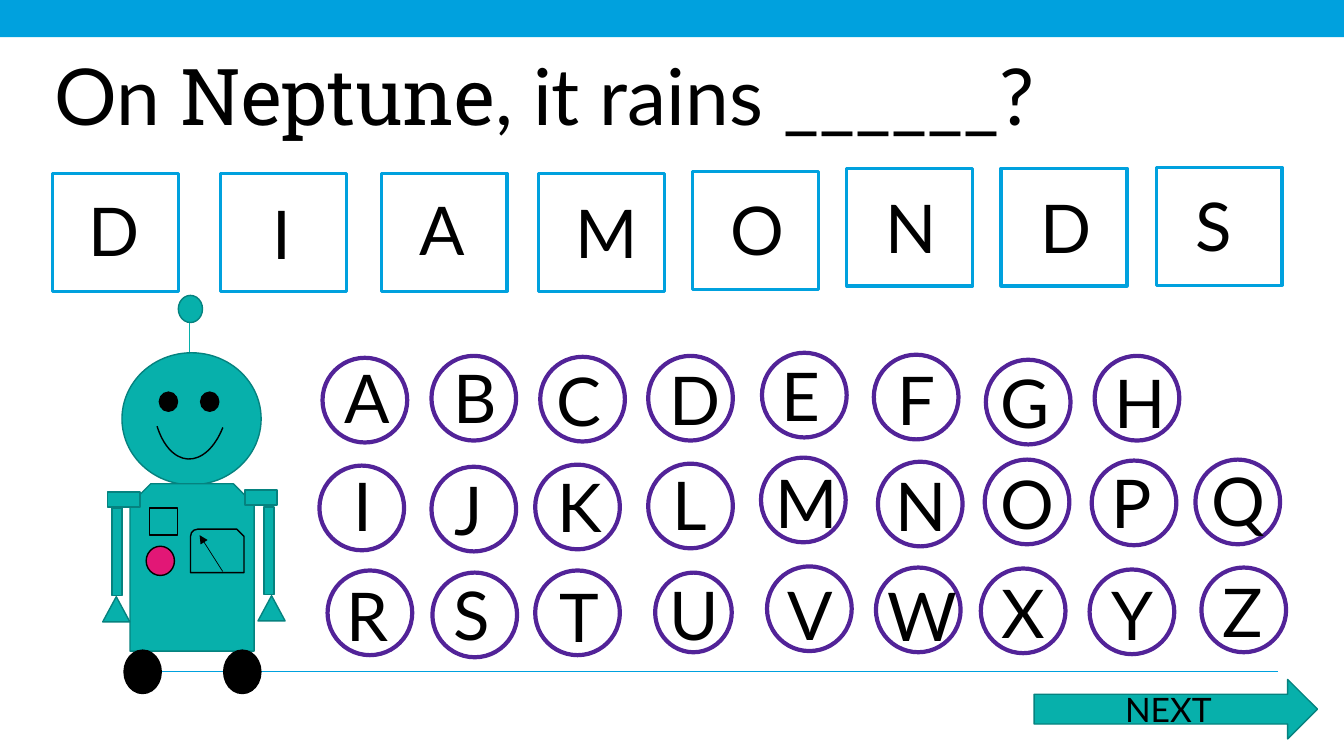
from pptx import Presentation
from pptx.dml.color import RGBColor
from pptx.enum import shapes, text
from pptx.oxml import xmlchemy
from pptx.util import Pt

KIND = shapes.MSO_SHAPE
COLORS = {
    "blue": "00A1DE", "teal": "07B0AB", "dark teal": "05827F",
    "purple": "522398", "pink": "E21776", "black": "000000", "white": "FFFFFF",
}
FONT = "Lato"
ACCENT_FONT = "Roboto Slab"

# Letter, left and top of its frame, left and top of its text
ANSWER = [
    ("D", 37.4, 123.8, 56.2, 131.8), ("I", 157.7, 123.8, 187.9, 133.9),
    ("A", 272.2, 123.8, 292.3, 131), ("M", 384.5, 123.8, 403.9, 133.2),
    ("O", 494.6, 122.4, 514.8, 131), ("N", 604.8, 120.2, 625.7, 129.6),
    ("D", 715, 120.2, 735.8, 129.6), ("S", 825.8, 119.5, 846.7, 128.2),
]
ALPHABET = [
    ("A", 230.4, 255.6, 239, 250.6), ("B", 308.2, 254.2, 316.8, 250.6),
    ("C", 385.9, 254.9, 390.2, 253.4), ("D", 463, 254.2, 470.9, 252.7),
    ("E", 544.3, 252, 550.8, 249.8), ("F", 624.2, 253.4, 634.3, 252.7),
    ("G", 704.2, 257, 707.8, 254.2), ("H", 781.9, 254.2, 789.1, 254.2),
    ("I", 228.2, 332.6, 245.5, 328.3), ("J", 308.2, 333.4, 317.5, 331.2),
    ("K", 382.3, 331.9, 391, 329), ("L", 463, 331.2, 473, 327.6),
    ("M", 543.6, 326.9, 546.5, 326.2), ("N", 627.1, 329.8, 632.9, 328.3),
    ("O", 703.4, 328.3, 707.8, 326.9), ("P", 779.8, 329, 787, 326.2),
    ("Q", 853.9, 328.3, 858.2, 324.7),
    ("R", 234, 407.5, 240.5, 406.8), ("S", 308.9, 409, 316.8, 406.1),
    ("T", 382.3, 407.5, 392.4, 407.5), ("U", 468, 409, 470.9, 406.1),
    ("V", 547.9, 404.6, 555.1, 406.1), ("W", 625.7, 405.4, 627.1, 406.8),
    ("X", 700.6, 406.1, 708.5, 404.6), ("Y", 778.3, 406.8, 787, 406.1),
    ("Z", 858.2, 405.4, 866.2, 403.9),
]


def rgb(name):
    return RGBColor.from_string(COLORS[name])


def add_run(paragraph, words, size, font=FONT):
    run = paragraph.add_run()
    run.text = words
    run.font.name = font
    run.font.size = Pt(size)
    run.font.bold = False
    run.font.color.rgb = rgb("black")


def add_shape(slide, kind, box, fill, line=None, width=1):
    shape = slide.shapes.add_shape(kind, *map(Pt, box))
    shape.shadow.inherit = False
    if fill:
        shape.fill.solid()
        shape.fill.fore_color.rgb = rgb(fill)
    else:
        shape.fill.background()
    if line:
        shape.line.color.rgb = rgb(line)
        shape.line.width = Pt(width)
    else:
        shape.line.fill.background()
    return shape


def add_line(slide, start, end, color, width, arrow=False):
    line = slide.shapes.add_connector(
        shapes.MSO_CONNECTOR.STRAIGHT, *map(Pt, start + end))
    line.line.color.rgb = rgb(color)
    line.line.width = Pt(width)
    if arrow:
        tail = xmlchemy.OxmlElement("a:tailEnd")
        tail.set("type", "triangle")
        line.line._get_or_add_ln().append(tail)
    line._element.spPr.append(xmlchemy.OxmlElement("a:effectLst"))


def add_letter(slide, letter, left, top):
    box = slide.shapes.add_textbox(Pt(left), Pt(top), Pt(54), Pt(65.5))
    box.text_frame.word_wrap = True
    add_run(box.text_frame.paragraphs[0], letter, 48)


def add_question(slide):
    title = slide.shapes.title
    title.left, title.top, title.width, title.height = map(Pt, (31.7, 37.4, 850.3, 74))
    frame = title.text_frame
    frame.word_wrap = True
    frame.auto_size = text.MSO_AUTO_SIZE.NONE
    frame.vertical_anchor = text.MSO_ANCHOR.TOP
    paragraph = frame.paragraphs[0]
    paragraph.alignment = text.PP_ALIGN.LEFT
    paragraph.line_spacing = 0.9
    paragraph.space_before = Pt(0)
    add_run(paragraph, "On ", 56)
    add_run(paragraph, "Neptune", 56, ACCENT_FONT)
    add_run(paragraph, ", it rains ______?", 56)


def add_answer(slide):
    for letter, left, top, text_left, text_top in ANSWER:
        add_shape(slide, KIND.RECTANGLE, (left, top, 90, 84.2), "white", "blue", 2.25)
        add_letter(slide, letter, text_left, text_top)


def add_alphabet(slide):
    for letter, left, top, text_left, text_top in ALPHABET:
        size = (54.7, 56.9) if letter == "U" else (60.5, 60.5)
        add_shape(slide, KIND.OVAL, (left, top, *size), "white", "purple", 3)
        add_letter(slide, letter, text_left, text_top)


def add_robot(slide):
    # Antenna, head and body
    add_shape(slide, KIND.OVAL, (127.4, 211, 17.3, 19.4), "teal", "dark teal")
    add_line(slide, (135.4, 230.4), (135.4, 268.6), "teal", 0.5)
    add_shape(slide, KIND.OVAL, (87.1, 252, 99.4, 94.3), "teal", "dark teal")
    add_shape(slide, KIND.SNIP_2_SAME_RECTANGLE, (92.9, 345.6, 88.6, 119.5),
              "teal", "dark teal")

    # Face
    for left in (113.8, 143.3):
        add_shape(slide, KIND.OVAL, (left, 280.1, 13, 13.7), "black", "black")
    smile = add_shape(slide, KIND.ARC, (87.8, 251.3, 97.9, 55.4), None, "black")
    smile.adjustments[0] = 189.99
    smile.adjustments[1] = 24.61
    smile.rotation = 93

    # Chest panel
    add_shape(slide, KIND.SNIP_ROUND_RECTANGLE, (136.1, 378, 38.2, 31), "teal", "black")
    add_line(slide, (159.1, 408.2), (142.6, 382.3), "black", 0.5, arrow=True)
    add_shape(slide, KIND.RECTANGLE, (106.6, 362.9, 20.2, 19.4), "teal", "black")
    add_shape(slide, KIND.OVAL, (104.4, 390.2, 20.2, 20.9), "pink", "black")

    # Wheels
    for left in (88.6, 159.8):
        add_shape(slide, KIND.OVAL, (left, 464.4, 26.6, 31), "black", "black")

    # Arms: lefts of forearm, shoulder and hand, then their tops
    arms = [((79.9, 77, 73.4), (362.9, 351.4, 426.2)),
            ((188.6, 175, 184.3), (362.2, 349.9, 425.5))]
    parts = [(KIND.RECTANGLE, 7.2, 62.6), (KIND.RECTANGLE, 23, 10.8),
             (KIND.ISOSCELES_TRIANGLE, 19.4, 18)]
    for lefts, tops in arms:
        for (kind, width, height), left, top in zip(parts, lefts, tops):
            add_shape(slide, kind, (left, top, width, height), "teal", "dark teal")


def add_next_arrow(slide):
    arrow = add_shape(slide, KIND.RIGHT_ARROW, (738.7, 485.3, 202.3, 42.5),
                      "teal", "dark teal")
    frame = arrow.text_frame
    frame.margin_top = frame.margin_bottom = Pt(0)
    frame.vertical_anchor = text.MSO_ANCHOR.MIDDLE
    frame.paragraphs[0].alignment = text.PP_ALIGN.CENTER
    add_run(frame.paragraphs[0], "NEXT", 24)


def main():
    presentation = Presentation()
    presentation.slide_width, presentation.slide_height = Pt(960), Pt(540)
    slide = presentation.slides.add_slide(presentation.slide_layouts[5])

    # Top bar and ground line
    add_shape(slide, KIND.RECTANGLE, (0, 0, 960, 26.6), "blue")
    add_line(slide, (88.6, 479.5), (913, 479.5), "blue", 1)

    add_question(slide)
    add_answer(slide)
    add_robot(slide)
    add_alphabet(slide)
    add_next_arrow(slide)
    presentation.save("out.pptx")


if __name__ == "__main__":
    main()
